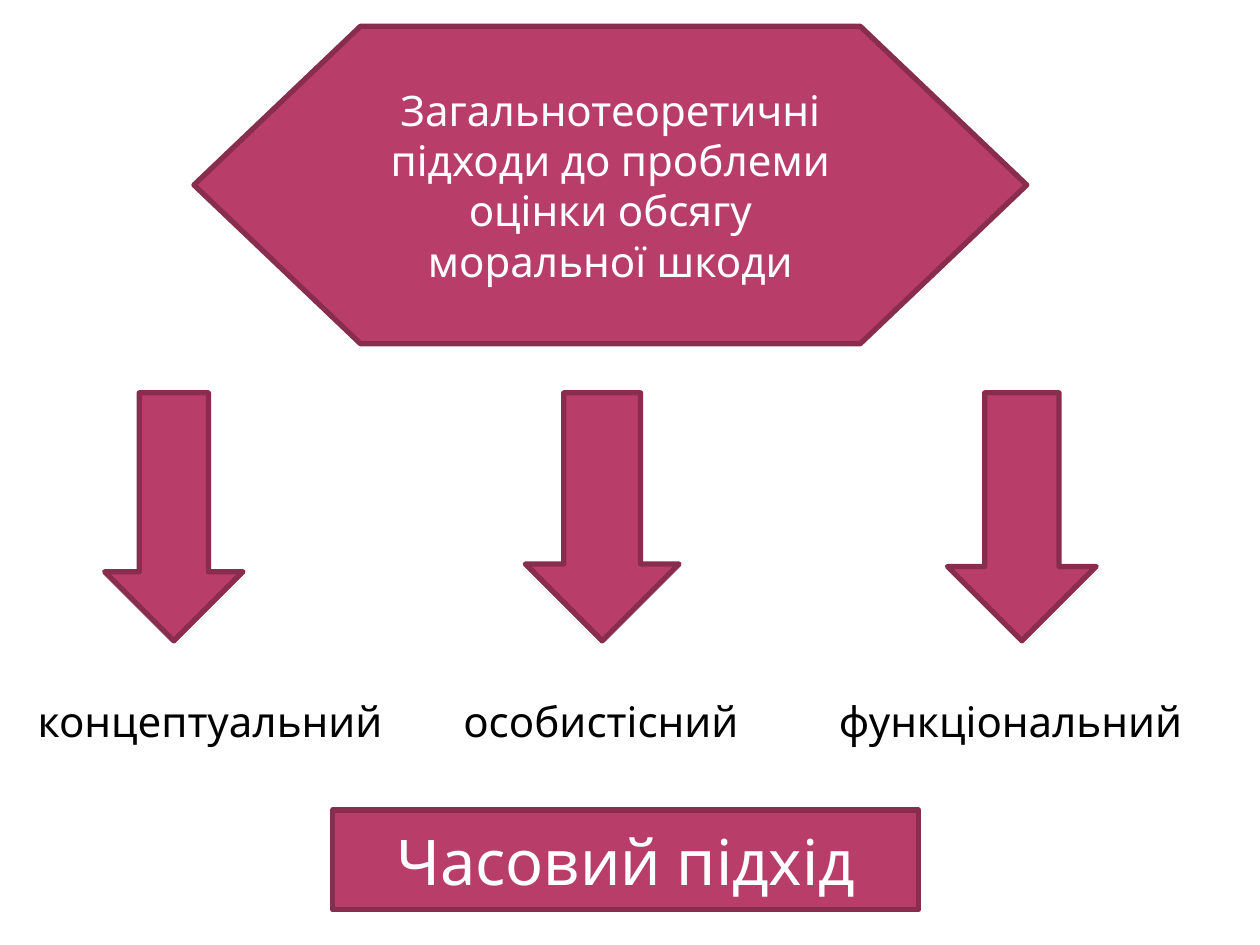
from pptx import Presentation
from pptx.dml.color import RGBColor
from pptx.enum.shapes import MSO_SHAPE
from pptx.enum.text import MSO_ANCHOR, MSO_AUTO_SIZE, PP_ALIGN
from pptx.util import Cm, Pt

HEXAGON = MSO_SHAPE.FLOWCHART_PREPARATION
DOWN_ARROW = MSO_SHAPE.DOWN_ARROW
RECTANGLE = MSO_SHAPE.RECTANGLE
MIDDLE = MSO_ANCHOR.MIDDLE
CENTER = PP_ALIGN.CENTER
FIT_SHAPE = MSO_AUTO_SIZE.SHAPE_TO_FIT_TEXT

FONT = "League Spartan"
FILL = "B83D68"
OUTLINE = "882D4D"
WHITE = "FFFFFF"
BLACK = "000000"

BRANCH_TOP = 7.92
ARROW_HEIGHT = 5
LABEL_OFFSET = 5.98
LABEL_HEIGHT = 1.27
BRANCHES = [
    ("концептуальний", 0.51, 8.36, 1.6, 2.79),
    ("особистісний", 9.09, 8.41, 1.5, 3.1),
    ("функціональний", 16.66, 9.07, 2.44, 3),
]


def color(value):
    return RGBColor.from_string(value)


def write_text(shape, text, size, text_color):
    paragraph = shape.text_frame.paragraphs[0]
    paragraph.text = text
    paragraph.font.name = FONT
    paragraph.font.size = Pt(size)
    paragraph.font.color.rgb = color(text_color)
    return paragraph


def add_block(slide, kind, left, top, width, height):
    shape = slide.shapes.add_shape(kind, Cm(left), Cm(top), Cm(width), Cm(height))
    shape.shadow.inherit = False
    shape.fill.solid()
    shape.fill.fore_color.rgb = color(FILL)
    shape.line.color.rgb = color(OUTLINE)
    shape.line.width = Pt(3)
    return shape


def add_banner(slide, kind, text, size, left, top, width, height):
    shape = add_block(slide, kind, left, top, width, height)
    shape.text_frame.word_wrap = True
    shape.text_frame.vertical_anchor = MIDDLE
    write_text(shape, text, size, WHITE).alignment = CENTER


def add_branch(slide, text, left, top, width, arrow_offset, arrow_width):
    add_block(slide, DOWN_ARROW, left + arrow_offset, top, arrow_width, ARROW_HEIGHT)
    label = slide.shapes.add_textbox(
        Cm(left), Cm(top + LABEL_OFFSET), Cm(width), Cm(LABEL_HEIGHT)
    )
    label.text_frame.word_wrap = True
    label.text_frame.auto_size = FIT_SHAPE
    write_text(label, text, 24, BLACK)


def main():
    presentation = Presentation()
    presentation.slide_width = Cm(25.4)
    presentation.slide_height = Cm(19.05)
    slide = presentation.slides.add_slide(presentation.slide_layouts[6])

    title = "Загальнотеоретичні підходи до проблеми оцінки обсягу моральної шкоди"
    add_banner(slide, HEXAGON, title, 24, 3.91, 0.53, 16.79, 6.4)
    for text, left, width, arrow_offset, arrow_width in BRANCHES:
        add_branch(slide, text, left, BRANCH_TOP, width, arrow_offset, arrow_width)
    add_banner(slide, RECTANGLE, "Часовий підхід", 36, 6.71, 16.33, 11.81, 2.01)

    presentation.save("out.pptx")


if __name__ == "__main__":
    main()
